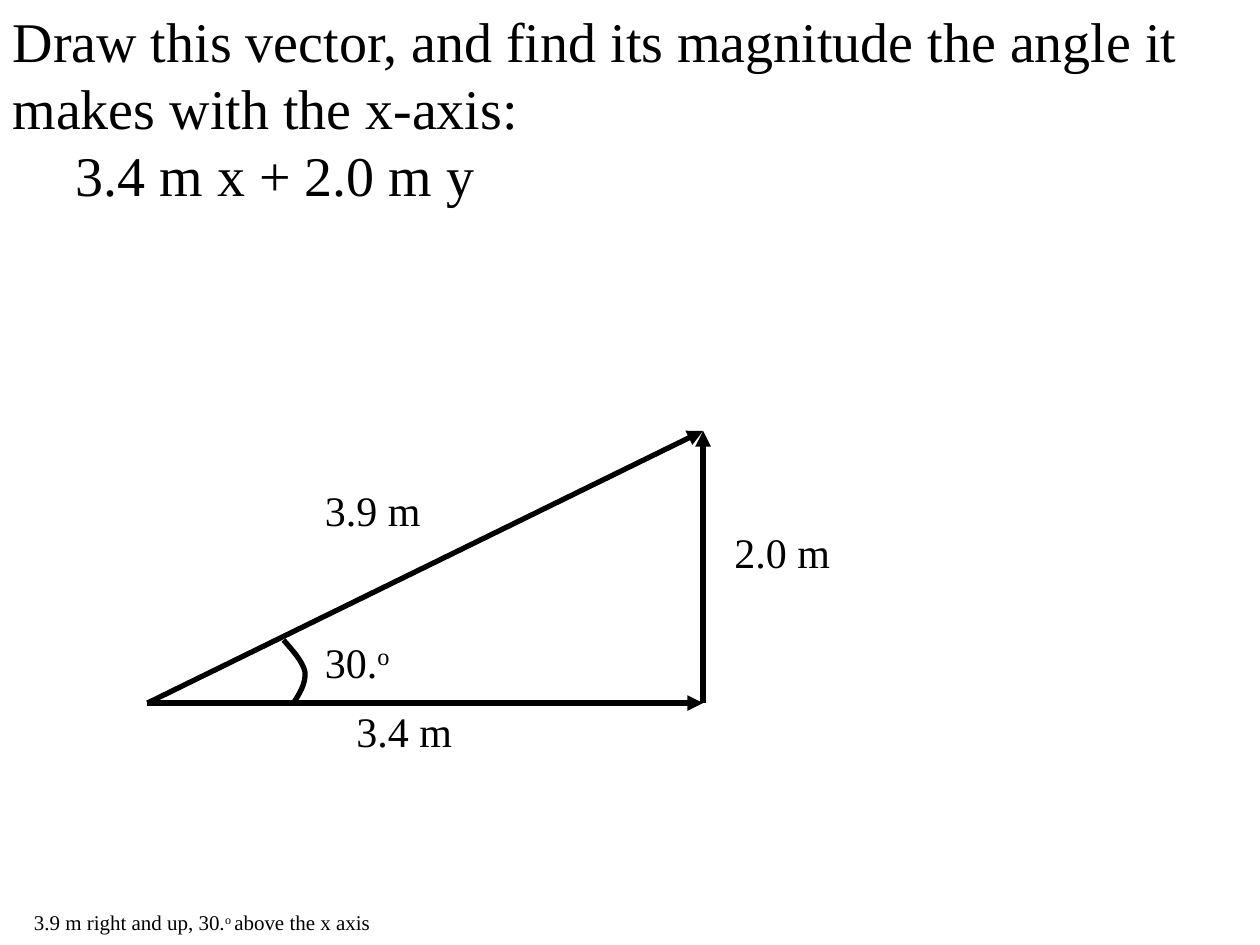
import pptx
import pptx.util
import pptx.dml.color
import pptx.enum.shapes
import pptx.enum.text
from lxml import etree
from pptx.oxml.ns import qn
from pptx.util import Inches, Pt

COLORS = {"ink": "000000", "page": "FFFFFF"}
FONT = "Times New Roman"
INK = pptx.dml.color.RGBColor.from_string(COLORS["ink"])


def write(shape, *lines, size=24, wrap=False):
    """Fill a shape with one paragraph a line; text between ^ marks is raised."""
    frame = shape.text_frame
    frame.word_wrap = wrap
    frame.auto_size = pptx.enum.text.MSO_AUTO_SIZE.SHAPE_TO_FIT_TEXT
    frame.vertical_anchor = pptx.enum.text.MSO_ANCHOR.TOP
    for i, line in enumerate(lines):
        para = frame.paragraphs[0] if i == 0 else frame.add_paragraph()
        para.alignment = pptx.enum.text.PP_ALIGN.LEFT
        for j, part in enumerate(line.split("^")):
            run = para.add_run()
            run.text = part
            run.font.name = FONT
            run.font.size = Pt(size)
            run.font.color.rgb = INK
            if j % 2:
                run.font._element.set("baseline", "30000")


deck = pptx.Presentation()
deck.slide_width, deck.slide_height = Inches(10), Inches(7.5)
slide = deck.slides.add_slide(deck.slide_layouts[5])
fill = slide.background.fill
fill.solid()
fill.fore_color.rgb = pptx.dml.color.RGBColor.from_string(COLORS["page"])

# Answer and question
note = slide.shapes.add_textbox(Inches(0.17), Inches(7.17), Inches(2.89), Inches(0.3))
write(note, "3.9 m right and up, 30.^o ^above the x axis", size=12)

title = slide.shapes.title
title.left, title.top = Inches(0), Inches(0)
title.width, title.height = Inches(10), Inches(1.72)
write(title,
      "Draw this vector, and find its magnitude the angle it makes with the x-axis:",
      "\t3.4 m x + 2.0 m y", size=32, wrap=True)

# Vector triangle
group = slide.shapes.add_group_shape().shapes
tail, corner, tip = (1.17, 5.58), (5.58, 5.58), (5.58, 3.42)
for start, end in [(tail, corner), (corner, tip), (tail, tip)]:
    arrow = group.add_connector(pptx.enum.shapes.MSO_CONNECTOR.STRAIGHT,
                                *map(Inches, start + end))
    arrow.line.color.rgb = INK
    arrow.line.width = Pt(3)
    etree.SubElement(arrow.line._get_or_add_ln(), qn("a:tailEnd"), type="triangle")
    etree.SubElement(arrow._element.spPr, qn("a:effectLst"))

# Angle mark: two cubic curves, each drawn in short steps
curves = [[(2.25, 5.08), (2.33, 5.17), (2.4, 5.25), (2.42, 5.33)],
          [(2.42, 5.33), (2.43, 5.42), (2.38, 5.5), (2.33, 5.58)]]
steps = 12
dots = []
for curve in curves:
    for n in range(1, steps + 1):
        t = n / steps
        mix = [(1 - t) ** 3, 3 * t * (1 - t) ** 2, 3 * t ** 2 * (1 - t), t ** 3]
        dots.append([Inches(sum(m * p[k] for m, p in zip(mix, curve))) for k in (0, 1)])
pen = group.build_freeform(*map(Inches, curves[0][0]))
pen.add_line_segments(dots, close=False)
arc = pen.convert_to_shape()
arc.shadow.inherit = False
arc.fill.background()
arc.line.color.rgb = INK
arc.line.width = Pt(3)

for label, left, top, width in [("3.4 m", 2.73, 5.55, 0.96),
                                ("2.0 m", 5.73, 4.13, 0.96),
                                ("3.9 m", 2.48, 3.8, 0.96),
                                ("30.^o", 2.48, 5, 0.73)]:
    box = group.add_textbox(Inches(left), Inches(top), Inches(width), Inches(0.5))
    write(box, label)

deck.save("out.pptx")
